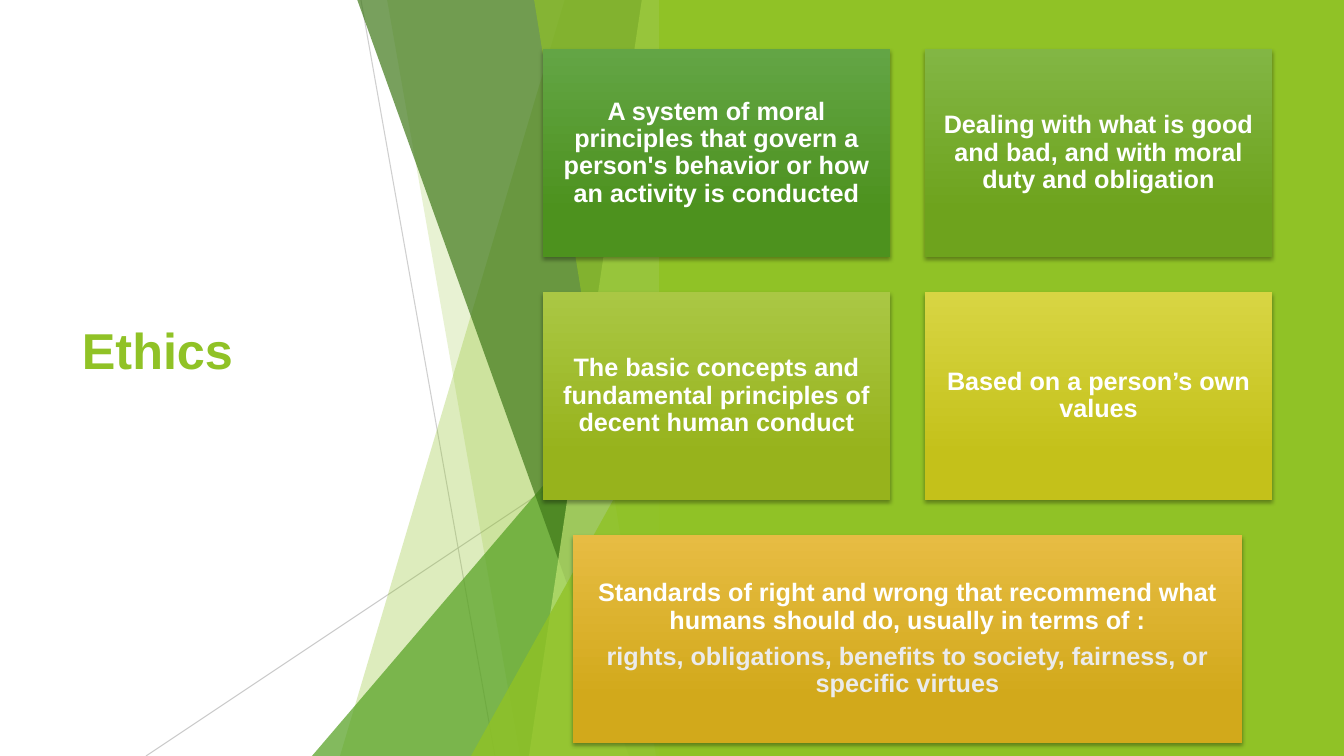
from lxml.etree import SubElement
from pptx import Presentation
from pptx.dml.color import RGBColor
from pptx.enum.shapes import MSO_CONNECTOR as CONNECTOR, MSO_SHAPE as SHAPE
from pptx.enum.text import MSO_ANCHOR as ANCHOR, PP_ALIGN as ALIGN
from pptx.oxml.ns import qn
from pptx.util import Emu, Pt

EMU_PER_PX = 914400 / 100.8
FONT = "Arial"
COLORS = {
    "lime": "90C226", "green": "54A021", "forest": "3F7819", "pale": "C0E474",
    "hairline": "BFBFBF", "white": "FFFFFF", "soft": "EBEBEB", "shadow": "000000",
}
# Top-left x and bottom-left x from the region's left, colour, opacity
FACETS_BACK = [(253, 28, "lime", 30), (75, 208, "lime", 20)]
FACETS_FRONT = [(45, 317, "forest", 70), (330, 217, "pale", 70), (222, 344, "lime", 65)]
# Gradient start and end, paragraphs as (text, colour)
CARDS = [
    ("63A545", "4D921E", [("A system of moral principles that govern a person's behavior "
                           "or how an activity is conducted", "white")]),
    ("82B644", "6EA31D", [("Dealing with what is good and bad, and with moral duty "
                           "and obligation", "white")]),
    ("AAC744", "97B31C", [("The basic concepts and fundamental principles of decent "
                           "human conduct", "white")]),
    ("D8D543", "C4C11A", [("Based on a person’s own values", "white")]),
    ("E7BC43", "D2A91B", [("Standards of right and wrong that recommend what humans "
                           "should do, usually in terms of :", "white"),
                          ("rights, obligations, benefits to society, fairness, "
                           "or specific virtues", "soft")]),
]


def px(length):
    return Emu(round(length * EMU_PER_PX))


def rgb(name):
    return RGBColor.from_string(COLORS[name])


def set_opacity(element, percent):
    for color in element.xpath(".//p:spPr//a:srgbClr"):
        SubElement(color, qn("a:alpha"), val=str(percent * 1000))


def paint(shape, color, opacity=100):
    shape.shadow.inherit = False
    shape.line.fill.background()
    shape.fill.solid()
    shape.fill.fore_color.rgb = rgb(color)
    if opacity < 100:
        set_opacity(shape.element, opacity)


def add_text(paragraph, text, size, color):
    run = paragraph.add_run()
    run.text = text
    run.font.name = FONT
    run.font.size = Pt(size)
    run.font.bold = True
    run.font.color.rgb = rgb(color)


def add_hairline(slide, start, end, opacity):
    hairline = slide.shapes.add_connector(
        CONNECTOR.STRAIGHT, px(start[0]), px(start[1]), px(end[0]), px(end[1]))
    hairline.line.color.rgb = rgb("hairline")
    hairline.line.width = Pt(0.75)
    set_opacity(hairline.element, opacity)
    SubElement(hairline.element.spPr, qn("a:effectLst"))


def add_facet(slide, left, top, right, bottom, facet):
    """Draw a sliver with a slanted left edge and a straight right edge."""
    top_x, bottom_x, color, opacity = facet
    builder = slide.shapes.build_freeform(left + top_x, top, scale=EMU_PER_PX)
    builder.add_line_segments(
        [(right, top), (right, bottom), (left + bottom_x, bottom)], close=True)
    paint(builder.convert_to_shape(), color, opacity)


def add_corner(slide, right, bottom, width, height, color, opacity):
    """Draw a right triangle that fills the bottom-right corner."""
    corner = slide.shapes.add_shape(
        SHAPE.ISOSCELES_TRIANGLE, px(right - width), px(bottom - height), px(width), px(height))
    corner.adjustments[0] = 1
    paint(corner, color, opacity)


def add_facets(slide, left, top, width, height):
    right, bottom = left + width, top + height
    add_hairline(slide, (left + 49, top), (left + 183, bottom), 75)
    add_hairline(slide, (right, top + 406), (left - 166, bottom), 80)
    for facet in FACETS_BACK:
        add_facet(slide, left, top - 1, right, bottom, facet)
    add_corner(slide, right, bottom, 359, 420, "green", 72)
    for facet in FACETS_FRONT:
        add_facet(slide, left, top - 1, right, bottom, facet)
    add_corner(slide, right, bottom, 200, 360, "lime", 80)


def add_panel(slide, left, top, width, height):
    panel = slide.shapes.add_shape(SHAPE.RECTANGLE, px(left), px(top), px(width), px(height))
    paint(panel, "lime")


def add_title(slide, left, top, width, height):
    title = slide.shapes.add_textbox(px(left), px(top), px(width), px(height))
    frame = title.text_frame
    frame.word_wrap = True
    frame.vertical_anchor = ANCHOR.MIDDLE
    frame.margin_bottom = px(63)
    add_text(frame.paragraphs[0], "Ethics", 36, "lime")


def add_card(slide, left, top, width, height, card):
    start, end, paragraphs = card
    box = slide.shapes.add_shape(SHAPE.RECTANGLE, px(left), px(top), px(width), px(height))
    box.line.fill.background()
    box.fill.gradient()
    box.fill.gradient_angle = 270
    for stop, position, color in zip(box.fill.gradient_stops, (0, 0.78), (start, end)):
        stop.position = position
        stop.color.rgb = RGBColor.from_string(color)

    box.shadow.inherit = False
    effects = box.element.spPr.find(qn("a:effectLst"))
    shadow = SubElement(effects, qn("a:outerShdw"), blurRad=str(Pt(3)), dist=str(Pt(2)),
                        dir="5400000", rotWithShape="0")
    shade = SubElement(shadow, qn("a:srgbClr"), val=COLORS["shadow"])
    SubElement(shade, qn("a:alpha"), val="35000")

    frame = box.text_frame
    frame.word_wrap = True
    frame.vertical_anchor = ANCHOR.MIDDLE
    frame.margin_left = frame.margin_right = px(7)
    frame.margin_top = frame.margin_bottom = px(7)
    for index, (text, color) in enumerate(paragraphs):
        paragraph = frame.add_paragraph() if index else frame.paragraphs[0]
        paragraph.alignment = ALIGN.CENTER
        paragraph.line_spacing = 0.9
        paragraph.space_after = Pt(6.3)
        add_text(paragraph, text, 18, color)


def add_cards(slide, left, top, width, height):
    """Lay out two rows of two cards and a wide, centred card below."""
    gap, wide = 35, 669
    card_width, card_height = (width - gap) / 2, (height - 2 * gap) / 3
    for index, card in enumerate(CARDS):
        row, column = divmod(index, 2)
        y = top + row * (card_height + gap)
        if row < 2:
            add_card(slide, left + column * (card_width + gap), y, card_width, card_height, card)
        else:
            add_card(slide, left + (width - wide) / 2, y, wide, card_height, card)


def main():
    deck = Presentation()
    deck.slide_width, deck.slide_height = px(1344), px(756)
    slide = deck.slides.add_slide(deck.slide_layouts[6])
    add_title(slide, 72, 152, 391, 452)
    add_facets(slide, 312, 0, 359, 756)
    add_panel(slide, 659, 0, 685, 756)
    add_cards(slide, 543, 49, 729, 694)
    deck.save("out.pptx")


if __name__ == "__main__":
    main()
